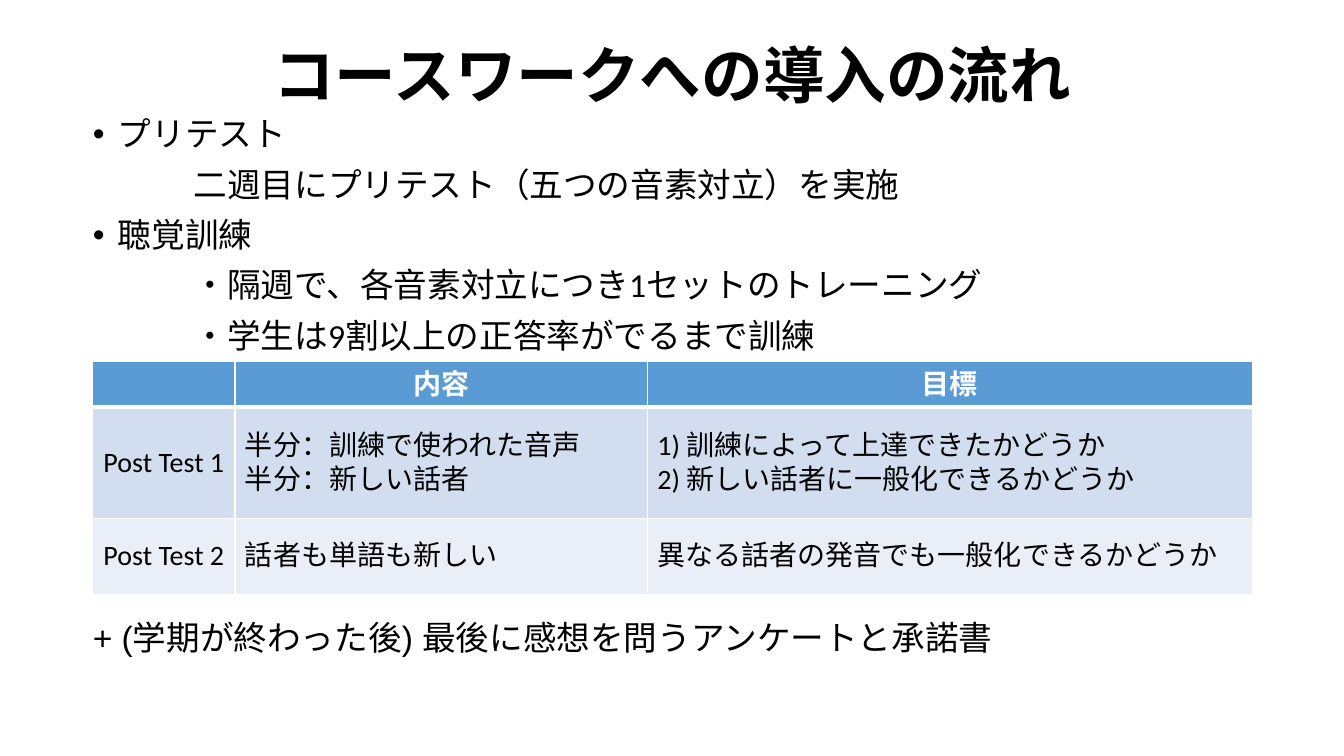
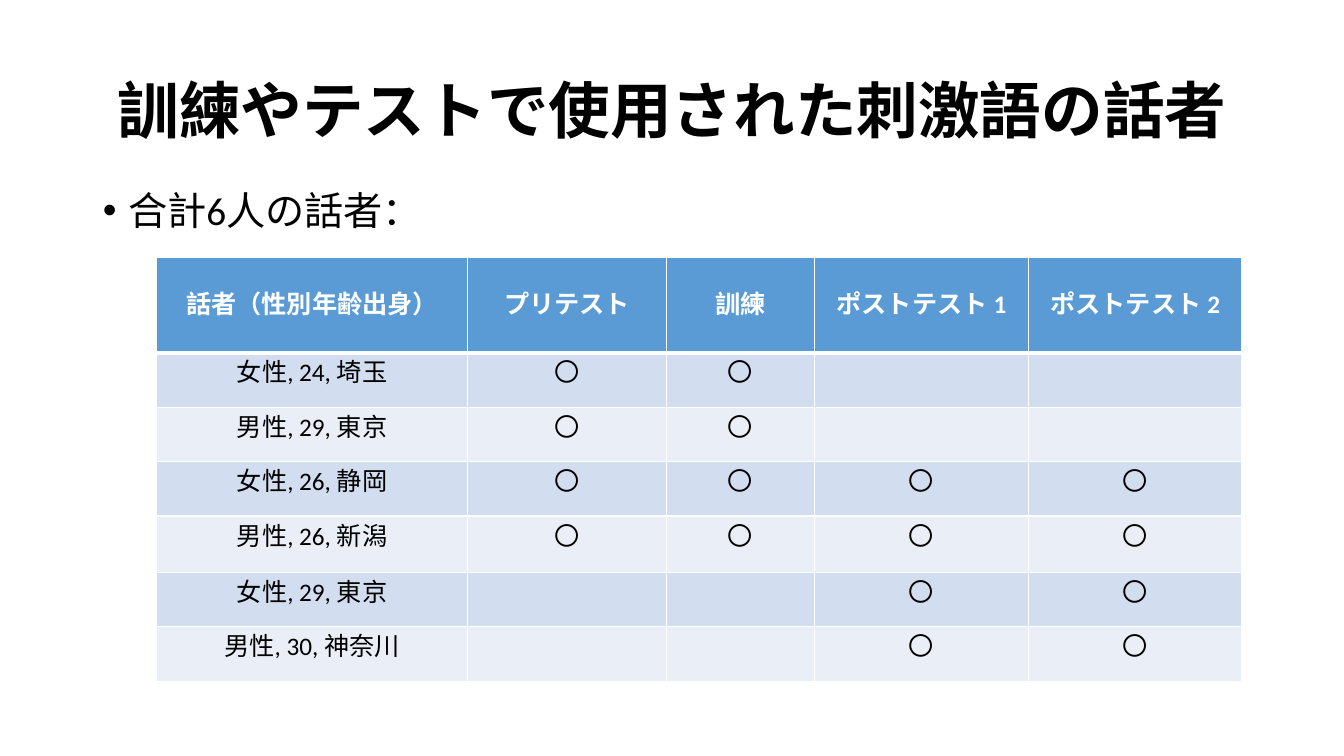
from itertools import cycle

from lxml import etree
from pptx import Presentation
from pptx.dml.color import RGBColor
from pptx.enum.text import MSO_ANCHOR, MSO_AUTO_SIZE, PP_ALIGN
from pptx.oxml.ns import qn
from pptx.util import Emu, Pt

CENTER, LEFT = PP_ALIGN.CENTER, PP_ALIGN.LEFT
MIDDLE, TOP = MSO_ANCHOR.MIDDLE, MSO_ANCHOR.TOP
NO_FIT = MSO_AUTO_SIZE.NONE
PX = 9144
BLACK, WHITE = "000000", "FFFFFF"
HEADER, BANDS = "5B9BD5", ("D2DEEF", "EAEFF7")
ARIAL, CALIBRI = "Arial", "Calibri"


def px(length):
    """Turn px into EMU."""
    return Emu(length * PX)


def rgb(color):
    """Turn a hex string into a colour."""
    return RGBColor.from_string(color)


def write(paragraph, text, size=20, color=BLACK, bold=False, fonts=(CALIBRI,),
          align=LEFT, spacing=None, before=None):
    """Write a string, or a tuple of runs that take the fonts in turn."""
    paragraph.alignment = align
    paragraph.line_spacing = spacing
    if before is not None:
        paragraph.space_before = Pt(before)
    runs = (text,) if isinstance(text, str) else text
    for part, typeface in zip(runs, cycle(fonts)):
        run = paragraph.add_run()
        run.text = part
        run.font.size, run.font.bold = Pt(size), bold
        run.font.name = typeface
        run.font.color.rgb = rgb(color)
        etree.SubElement(run.font._element, qn("a:ea"), typeface=typeface)


def border(cell, side, points):
    """Give one side of a cell a white line."""
    line = etree.SubElement(cell._tc.get_or_add_tcPr(), qn(f"a:ln{side}"),
                            w=str(Pt(points)))
    fill = etree.SubElement(line, qn("a:solidFill"))
    etree.SubElement(fill, qn("a:srgbClr"), val=WHITE)


class Deck:
    """Holds the presentation, its style and the current slide."""

    def __init__(self):
        """Start an empty wide presentation."""
        self.presentation = Presentation()
        self.presentation.slide_width = px(1333)
        self.presentation.slide_height = px(750)
        self.slide = None

    def place(self, placeholder, left, top, width, height):
        """Move a placeholder and return its text frame."""
        placeholder.left, placeholder.top = px(left), px(top)
        placeholder.width, placeholder.height = px(width), px(height)
        placeholder.text_frame.auto_size = NO_FIT
        return placeholder.text_frame

    def add_slide(self, title, top):
        """Add a slide with its title."""
        layout = self.presentation.slide_layouts[1]
        self.slide = self.presentation.slides.add_slide(layout)
        frame = self.place(self.slide.shapes.title, 92, top, 1150, 145)
        frame.vertical_anchor = MIDDLE
        write(frame.paragraphs[0], title, size=44, bold=True, fonts=(ARIAL,),
              align=CENTER, spacing=0.9, before=0)

    def body(self, box, lines, size):
        """Fill the body with (text, indent, space before); None is a bullet."""
        frame = self.place(self.slide.placeholders[1], *box)
        for index, (text, indent, before) in enumerate(lines):
            paragraph = frame.add_paragraph() if index else frame.paragraphs[0]
            write(paragraph, text, size=size, fonts=(ARIAL, CALIBRI),
                  spacing=0.9, before=before)
            properties = paragraph._p.get_or_add_pPr()
            if indent is None:
                properties.set("marL", str(px(25)))
                properties.set("indent", str(px(-25)))
            else:
                properties.set("marL", str(px(indent)))
                properties.set("indent", "0")
                etree.SubElement(properties, qn("a:buNone"))

    def table(self, left, top, widths, heights, rows, size, aligns, anchor):
        """Add a banded table whose first row is the header."""
        table = self.slide.shapes.add_table(
            len(rows), len(widths), px(left), px(top),
            px(sum(widths)), px(sum(heights))).table
        for column, width in zip(table.columns, widths):
            column.width = px(width)
        for number, (row, height) in enumerate(zip(rows, heights)):
            table.rows[number].height = px(height)
            heading = number == 0
            for position, text in enumerate(row):
                cell = table.cell(number, position)
                for side in "LRTB":
                    thick = (number, side) in ((0, "B"), (1, "T"))
                    border(cell, side, 3 if thick else 1)
                cell.fill.solid()
                cell.fill.fore_color.rgb = rgb(
                    HEADER if heading else BANDS[(number - 1) % 2])
                cell.vertical_anchor = MIDDLE if heading else anchor
                for index, line in enumerate(text.split("\n") if text else ()):
                    frame = cell.text_frame
                    write(frame.add_paragraph() if index else frame.paragraphs[0],
                          line, size=size, bold=heading,
                          color=WHITE if heading else BLACK,
                          align=CENTER if heading else aligns[position])


def course_flow(deck):
    """Build the slide on how the training enters the course."""
    deck.add_slide("コースワークへの導入の流れ", 5)
    deck.body((82, 112, 1232, 625), [
        ("プリテスト", None, 10),
        ("二週目にプリテスト（五つの音素対立）を実施", 100, 10),
        ("聴覚訓練", None, 10),
        (("・隔週で、各音素対立につき", "1", "セットのトレーニング"), 100, 10),
        (("・学生は", "9", "割以上の正答率がでるまで訓練"), 100, 10),
        ("+ (学期が終わった後) 最後に感想を問うアンケートと承諾書", 0, 190),
    ], size=24)
    post_tests = [
        ("", "内容", "目標"),
        ("Post Test 1", "半分：訓練で使われた音声\n半分：新しい話者",
         "1) 訓練によって上達できたかどうか\n2) 新しい話者に一般化できるかどうか"),
        ("Post Test 2", "話者も単語も新しい",
         "異なる話者の発音でも一般化できるかどうか"),
    ]
    deck.table(92, 359, (141, 409, 600), (45, 110, 76), post_tests, size=20,
               aligns=(CENTER, LEFT, LEFT), anchor=MIDDLE)


def speakers(deck):
    """Build the slide on who spoke the stimulus words."""
    deck.add_slide("訓練やテストで使用された刺激語の話者", 40)
    deck.body((92, 185, 1225, 491),
              [(("合計", "6", "人の話者："), None, 10)], size=28)
    training, both, post = (1, 1, 0, 0), (1, 1, 1, 1), (0, 0, 1, 1)
    uses = [
        ("女性, 24, 埼玉", training), ("男性, 29, 東京", training),
        ("女性, 26, 静岡", both), ("男性, 26, 新潟", both),
        ("女性, 29, 東京", post), ("男性, 30, 神奈川", post),
    ]
    rows = [("話者（性別年齢出身）", "プリテスト", "訓練",
             "ポストテスト 1", "ポストテスト 2")]
    rows += [(speaker, *("〇" * used for used in tests))
             for speaker, tests in uses]
    deck.table(155, 255, (309, 197, 147, 212, 212),
               (95, 54, 54, 54, 56, 54, 54), rows, size=18,
               aligns=(CENTER,) * 5, anchor=TOP)


def main():
    """Build and save the presentation."""
    deck = Deck()
    course_flow(deck)
    speakers(deck)
    deck.presentation.save("out.pptx")


if __name__ == "__main__":
    main()
